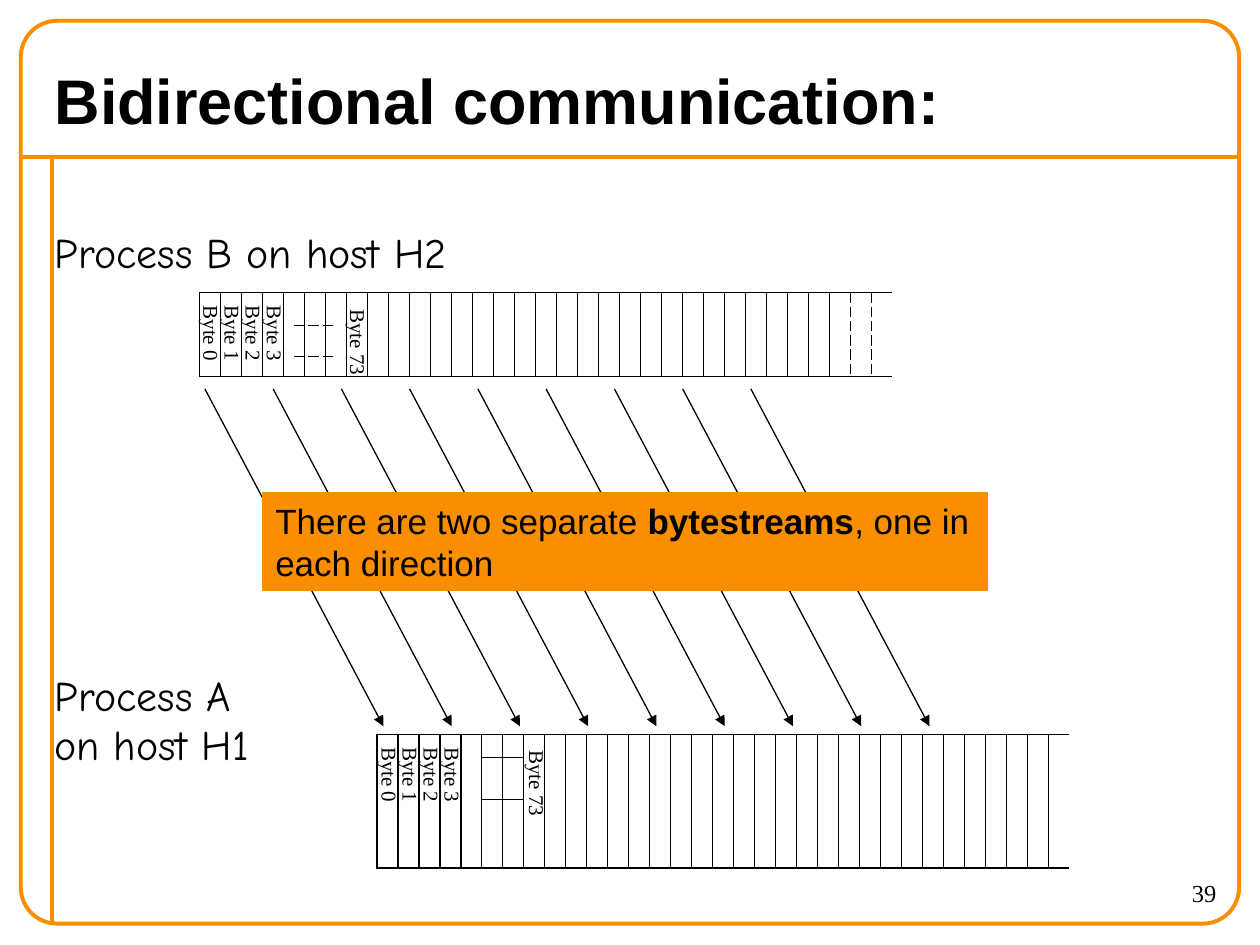
from dataclasses import dataclass

from lxml.etree import SubElement
from pptx import Presentation
from pptx.dml.color import RGBColor
from pptx.enum.dml import MSO_LINE
from pptx.enum.shapes import MSO_CONNECTOR, MSO_SHAPE
from pptx.enum.text import PP_ALIGN
from pptx.oxml.ns import qn
from pptx.util import Cm, Pt

ORANGE = RGBColor(0xF8, 0x8E, 0x00)
BLACK = RGBColor(0x00, 0x00, 0x00)
SANS, HAND, SERIF = "Arial", "Comic Neue", "Times New Roman"

CELL_COUNT = 33
STREAM_WIDTH = 13.97
PITCH = STREAM_WIDTH / CELL_COUNT
SENDER_LEFT, SENDER_TOP, SENDER_BOTTOM = 4.02, 5.9, 7.59
RECEIVER_LEFT, RECEIVER_TOP = 7.6, 14.81
RECEIVER_ROWS = (0.46, 0.84, 1.39)
GAP_COLUMNS = (5, 6, 7)
FIRST_BYTES = [f"Byte {number}" for number in range(4)]


@dataclass(frozen=True)
class Label:
    text: str
    left: float
    top: float
    width: float
    height: float
    font: str
    size: float
    bold: bool = False
    vertical: bool = False
    spacings: tuple[float, ...] = ()


@dataclass(frozen=True)
class Stroke:
    start: tuple[float, float]
    end: tuple[float, float]
    color: RGBColor = BLACK
    width: float = 0.75
    dashed: bool = False
    arrow: bool = False


LABELS = (
    Label("Bidirectional communication:", 1.1, 1.25, 23.2, 1.6, SANS, 36, bold=True),
    Label("Process B on host H2", 1.1, 4.57, 8.6, 1.07, HAND, 24),
    Label("Process A on host H1", 1.1, 13.52, 4.2, 2.0, HAND, 24, spacings=(28,)),
    Label("\n".join(reversed(FIRST_BYTES)), 3.97, 6.16, 1.83, 1.25, SERIF, 12,
          vertical=True, spacings=(14.3, 12.1, 12.1, 12.1)),
    Label("Byte 73", 6.95, 6.24, 0.53, 1.5, SERIF, 12, vertical=True),
    Label("Byte 73", 10.56, 15.13, 0.53, 1.5, SERIF, 12, vertical=True),
    Label("39", 24.03, 17.7, 0.7, 0.64, SERIF, 14),
)


def style_run(run, font: str, size: float, bold: bool = False) -> None:
    run.font.name = font
    run.font.size = Pt(size)
    run.font.bold = bold
    run.font.color.rgb = BLACK


def draw_label(slide, label: Label) -> None:
    box = slide.shapes.add_textbox(
        Cm(label.left), Cm(label.top), Cm(label.width), Cm(label.height))
    frame = box.text_frame
    frame.word_wrap = True
    frame.margin_left = frame.margin_right = frame.margin_top = frame.margin_bottom = 0
    if label.vertical:
        frame._txBody.bodyPr.set("vert", "vert")
    frame.text = label.text
    for paragraph in frame.paragraphs:
        for run in paragraph.runs:
            style_run(run, label.font, label.size, label.bold)
    for paragraph, spacing in zip(frame.paragraphs, label.spacings):
        paragraph.line_spacing = Pt(spacing)


def draw_stroke(slide, stroke: Stroke) -> None:
    connector = slide.shapes.add_connector(
        MSO_CONNECTOR.STRAIGHT, *map(Cm, stroke.start + stroke.end))
    connector.line.color.rgb = stroke.color
    connector.line.width = Pt(stroke.width)
    if stroke.dashed:
        connector.line.dash_style = MSO_LINE.LONG_DASH
    properties = connector._element.spPr
    if stroke.arrow:
        SubElement(properties.find(qn("a:ln")), qn("a:tailEnd"), type="triangle")
    SubElement(properties, qn("a:effectLst"))


def draw_frame(slide) -> None:
    draw_stroke(slide, Stroke((0.42, 3.17), (24.98, 3.17), ORANGE, 2.25))
    draw_stroke(slide, Stroke((1.05, 3.17), (1.05, 18.62), ORANGE, 2.25))
    border = slide.shapes.add_shape(
        MSO_SHAPE.ROUNDED_RECTANGLE, Cm(0.42), Cm(0.42), Cm(24.56), Cm(18.2))
    border.adjustments[0] = 0.04
    border.shadow.inherit = False
    border.fill.background()
    border.line.color.rgb = ORANGE
    border.line.width = Pt(2.25)


def draw_sender_stream(slide) -> None:
    for y in (SENDER_TOP, SENDER_BOTTOM):
        draw_stroke(slide, Stroke((SENDER_LEFT, y), (SENDER_LEFT + STREAM_WIDTH, y)))
    for index in range(CELL_COUNT):
        x = SENDER_LEFT + index * PITCH
        draw_stroke(slide, Stroke((x, SENDER_TOP), (x, SENDER_BOTTOM),
                                  dashed=index >= CELL_COUNT - 2))
    for y in (6.56, 7.19):
        draw_stroke(slide, Stroke((5.93, y), (6.77, y), dashed=True))


def draw_transfers(slide) -> None:
    for index in range(9):
        x = 4.13 + index * 1.376
        draw_stroke(slide, Stroke((x, 7.84), (x + 3.6, 14.64), arrow=True))


def draw_callout(slide) -> None:
    callout = slide.shapes.add_shape(
        MSO_SHAPE.RECTANGLE, Cm(5.29), Cm(9.93), Cm(14.61), Cm(1.98))
    callout.shadow.inherit = False
    callout.fill.solid()
    callout.fill.fore_color.rgb = ORANGE
    callout.line.color.rgb = ORANGE
    callout.line.width = Pt(0.75)
    frame = callout.text_frame
    frame.word_wrap = True
    frame.margin_left, frame.margin_right = Cm(0.26), Cm(0.1)
    frame.margin_top = frame.margin_bottom = 0
    paragraph = frame.paragraphs[0]
    paragraph.alignment = PP_ALIGN.LEFT
    for text, bold in (("There are two separate ", False), ("bytestreams", True),
                       (", one in each direction", False)):
        run = paragraph.add_run()
        run.text = text
        style_run(run, SANS, 20, bold)


def set_borders(cell, edges: str) -> None:
    properties = cell._tc.get_or_add_tcPr()
    for edge in "LRTB":
        line = SubElement(properties, qn(f"a:ln{edge}"), w=str(Pt(0.75)))
        if edge in edges:
            fill = SubElement(line, qn("a:solidFill"))
            SubElement(fill, qn("a:srgbClr"), val=str(BLACK))
        else:
            SubElement(line, qn("a:noFill"))


def edges_of(row: int, column: int) -> str:
    if column == CELL_COUNT - 1:
        return "LTB"
    if column == GAP_COLUMNS[-1]:
        return ("LRT", "LR", "LRB")[row]
    return "LRTB"


def write_byte(cell, text: str) -> None:
    cell._tc.tcPr.set("vert", "vert")
    paragraph = cell.text_frame.paragraphs[0]
    paragraph.text = text
    paragraph.line_spacing = Pt(12)
    paragraph._p.get_or_add_pPr().set("marL", str(Cm(0.25)))
    style_run(paragraph.runs[0], SERIF, 12)


def draw_receiver_stream(slide) -> None:
    table = slide.shapes.add_table(
        len(RECEIVER_ROWS), CELL_COUNT, Cm(RECEIVER_LEFT), Cm(RECEIVER_TOP),
        Cm(STREAM_WIDTH), Cm(sum(RECEIVER_ROWS))).table
    table.first_row = table.horz_banding = False
    for row, height in zip(table.rows, RECEIVER_ROWS):
        row.height = Cm(height)
    for index, column in enumerate(table.columns):
        column.width = Cm(PITCH)
        if index not in GAP_COLUMNS:
            table.cell(0, index).merge(table.cell(len(RECEIVER_ROWS) - 1, index))
        for row in range(len(RECEIVER_ROWS)):
            cell = table.cell(row, index)
            cell.margin_left = cell.margin_right = cell.margin_top = cell.margin_bottom = 0
            set_borders(cell, edges_of(row, index))
            cell.fill.background()
            if row == 0 and index < len(FIRST_BYTES):
                write_byte(cell, FIRST_BYTES[index])
            else:
                SubElement(cell.text_frame.paragraphs[0]._p, qn("a:endParaRPr"), sz="800")


def main() -> None:
    presentation = Presentation()
    presentation.slide_width, presentation.slide_height = Cm(25.4), Cm(19.05)
    slide = presentation.slides.add_slide(presentation.slide_layouts[6])
    draw_frame(slide)
    draw_sender_stream(slide)
    draw_transfers(slide)
    draw_callout(slide)
    for label in LABELS:
        draw_label(slide, label)
    draw_receiver_stream(slide)
    presentation.save("out.pptx")


if __name__ == "__main__":
    main()
